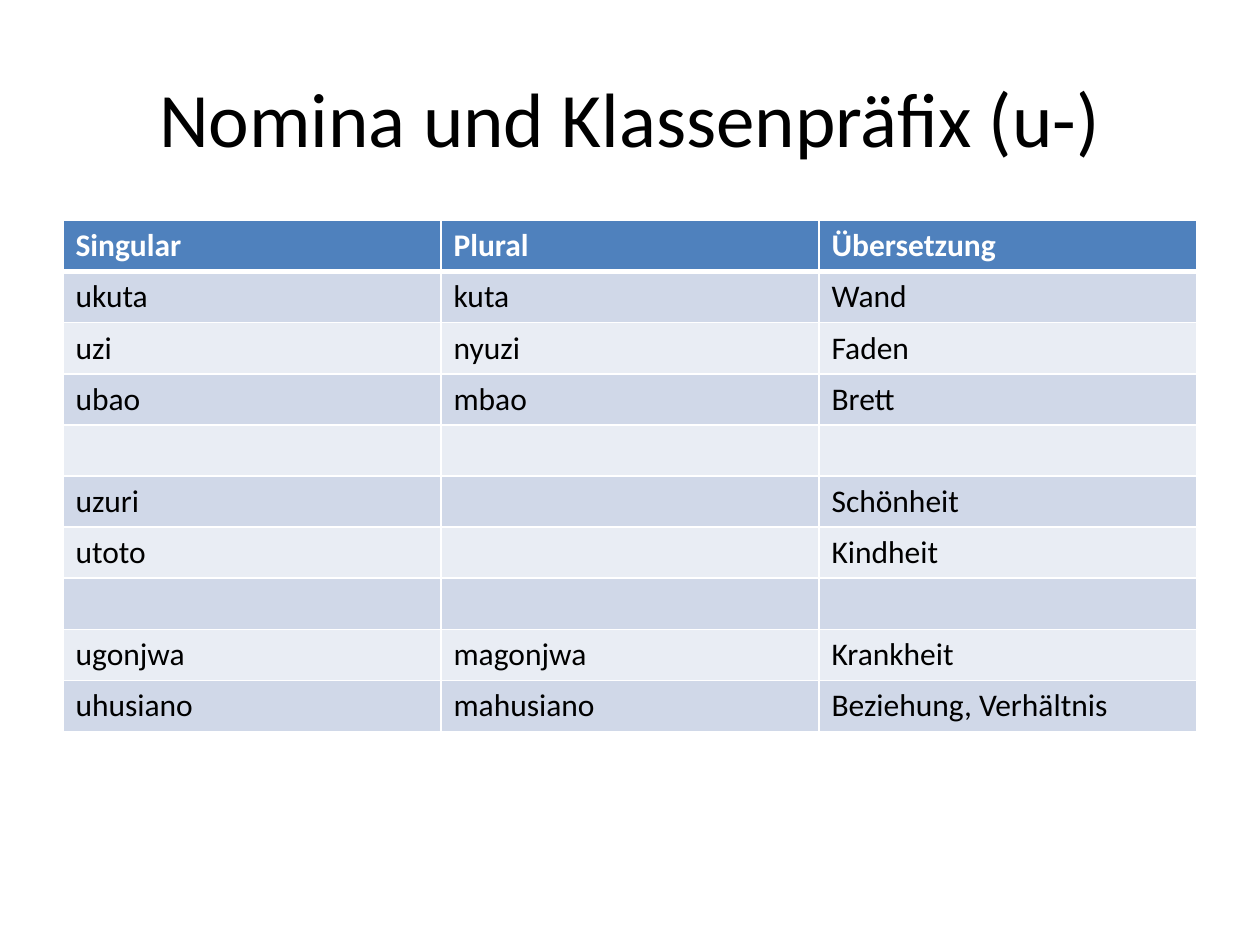
import pptx
import pptx.dml.color
import pptx.enum.text
import pptx.oxml
import pptx.oxml.ns
import pptx.util

Pt = pptx.util.Pt
RGBColor = pptx.dml.color.RGBColor

BLACK = RGBColor(0x00, 0x00, 0x00)
WHITE = RGBColor(0xFF, 0xFF, 0xFF)
HEADER_BLUE = RGBColor(0x4F, 0x81, 0xBD)
BAND_DARK = RGBColor(0xD0, 0xD8, 0xE8)
BAND_LIGHT = RGBColor(0xE9, 0xED, 0xF4)

FONT = "Calibri"
COLUMN_WIDTH = 216
ROW_HEIGHT = 29.2

NOUNS = [
    ("Singular", "Plural", "Übersetzung"),
    ("ukuta", "kuta", "Wand"),
    ("uzi", "nyuzi", "Faden"),
    ("ubao", "mbao", "Brett"),
    ("", "", ""),
    ("uzuri", "", "Schönheit"),
    ("utoto", "", "Kindheit"),
    ("", "", ""),
    ("ugonjwa", "magonjwa", "Krankheit"),
    ("uhusiano", "mahusiano", "Beziehung, Verhältnis"),
]


def format_font(paragraph, size, color, bold=False):
    font = paragraph.font
    font.name = FONT
    font.size = Pt(size)
    font.bold = bold
    font.color.rgb = color


def add_title(slide, text):
    title = slide.shapes.title
    title.left, title.top = Pt(36), Pt(21.6)
    title.width, title.height = Pt(648), Pt(90)
    title.text_frame.text = text
    title.text_frame.vertical_anchor = pptx.enum.text.MSO_ANCHOR.MIDDLE
    paragraph = title.text_frame.paragraphs[0]
    paragraph.alignment = pptx.enum.text.PP_ALIGN.CENTER
    format_font(paragraph, 44, BLACK)


def set_borders(cell, widths):
    """Draw white cell borders; widths maps each side (L, R, T, B) to points."""
    properties = cell._tc.get_or_add_tcPr()
    for side, width in widths.items():
        properties.append(pptx.oxml.parse_xml(
            f'<a:ln{side} {pptx.oxml.ns.nsdecls("a")} w="{Pt(width)}">'
            f'<a:solidFill><a:srgbClr val="{WHITE}"/></a:solidFill></a:ln{side}>'
        ))


def fill_cell(cell, text, row_index):
    is_header = row_index == 0
    # The thick rule under the header is also the top of the first body row.
    set_borders(cell, {
        "L": 1,
        "R": 1,
        "T": 3 if row_index == 1 else 1,
        "B": 3 if is_header else 1,
    })
    band = BAND_DARK if row_index % 2 else BAND_LIGHT
    cell.fill.solid()
    cell.fill.fore_color.rgb = HEADER_BLUE if is_header else band
    cell.text = text
    format_font(cell.text_frame.paragraphs[0], 18,
                WHITE if is_header else BLACK, bold=is_header)


def add_noun_table(slide, nouns):
    row_count, column_count = len(nouns), len(nouns[0])
    table = slide.shapes.add_table(
        row_count, column_count, Pt(36), Pt(126),
        Pt(COLUMN_WIDTH * column_count), Pt(ROW_HEIGHT * row_count),
    ).table
    for column in table.columns:
        column.width = Pt(COLUMN_WIDTH)
    for row_index, (row, words) in enumerate(zip(table.rows, nouns)):
        row.height = Pt(ROW_HEIGHT)
        for cell, word in zip(row.cells, words):
            fill_cell(cell, word, row_index)


def main():
    presentation = pptx.Presentation()
    presentation.slide_width, presentation.slide_height = Pt(720), Pt(540)
    title_only = presentation.slide_layouts[5]
    slide = presentation.slides.add_slide(title_only)
    add_title(slide, "Nomina und Klassenpräfix (u-)")
    add_noun_table(slide, NOUNS)
    presentation.save("out.pptx")


if __name__ == "__main__":
    main()
